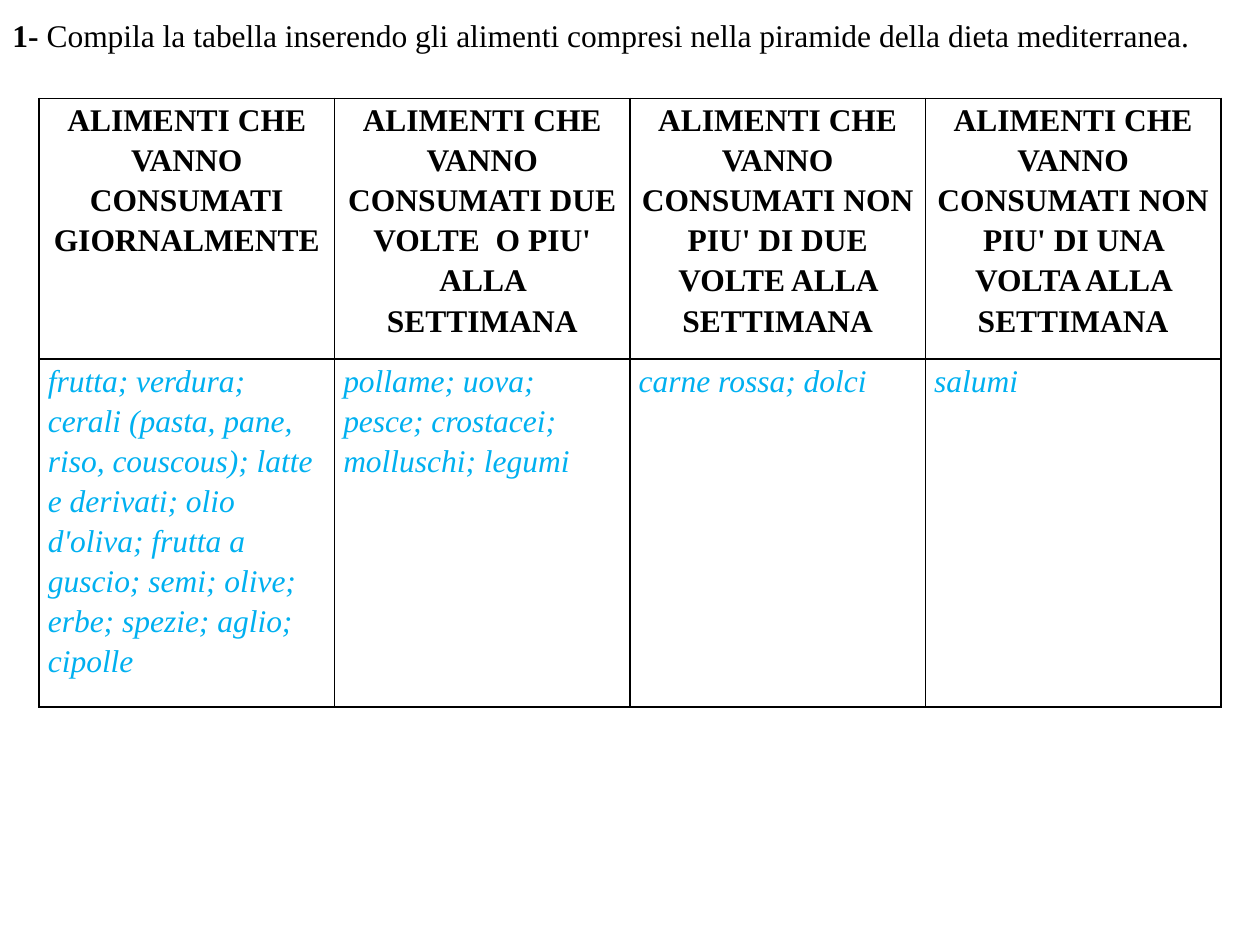
from lxml.etree import SubElement
from pptx import Presentation
from pptx.dml.color import RGBColor
from pptx.enum.text import MSO_ANCHOR, MSO_AUTO_SIZE, PP_ALIGN
from pptx.oxml.ns import qn
from pptx.util import Inches, Pt

COLORS = {"ink": "000000", "answer": "00B0F0", "paper": "FFFFFF"}

HEADS = [
    "ALIMENTI CHE VANNO CONSUMATI GIORNALMENTE",
    "ALIMENTI CHE VANNO CONSUMATI DUE VOLTE  O PIU' ALLA SETTIMANA",
    "ALIMENTI CHE VANNO CONSUMATI NON PIU' DI DUE VOLTE ALLA SETTIMANA",
    "ALIMENTI CHE VANNO CONSUMATI NON PIU' DI UNA VOLTA ALLA SETTIMANA",
]
FOODS = [
    "frutta; verdura; cerali (pasta, pane, riso, couscous); latte e derivati; "
    "olio d'oliva; frutta a guscio; semi; olive; erbe; spezie; aglio; cipolle",
    "pollame; uova; pesce; crostacei; molluschi; legumi",
    "carne rossa; dolci",
    "salumi",
]


def write(para, text, color="ink", bold=False, italic=False,
          font="Times New Roman", size=18):
    """Add one formatted run to a paragraph."""
    run = para.add_run()
    run.text = text
    run.font.name, run.font.size = font, Pt(size)
    run.font.bold, run.font.italic = bold, italic
    run.font.color.rgb = RGBColor.from_string(COLORS[color])


class Sheet:
    def __init__(self, slide):
        self.slide = slide
        self.inset = Inches(0.07)
        self.border = Pt(1)

    def title(self, number, text, left, top, width, height):
        box = self.slide.shapes.add_textbox(
            Inches(left), Inches(top), Inches(width), Inches(height))
        frame = box.text_frame
        frame.word_wrap = False
        frame.auto_size = MSO_AUTO_SIZE.SHAPE_TO_FIT_TEXT
        frame.vertical_anchor = MSO_ANCHOR.MIDDLE
        para = frame.paragraphs[0]
        write(para, number, bold=True)
        write(para, text)

    def table(self, rows, left, top, width, heights):
        count = len(rows[0])
        table = self.slide.shapes.add_table(
            len(rows), count, Inches(left), Inches(top),
            Inches(width), Inches(sum(heights))).table
        for col in table.columns:
            col.width = Inches(width / count)
        for r, (texts, height) in enumerate(zip(rows, heights)):
            table.rows[r].height = Inches(height)
            for c, text in enumerate(texts):
                self.cell(table.cell(r, c), text, head=r == 0)

    def cell(self, cell, text, head):
        cell.margin_left = cell.margin_right = self.inset
        cell.margin_top = cell.margin_bottom = 0
        self.frame(cell)
        cell.fill.solid()
        cell.fill.fore_color.rgb = RGBColor.from_string(COLORS["paper"])
        para = cell.text_frame.paragraphs[0]
        para.line_spacing = 1.15
        para.space_after = Pt(10)
        para.alignment = PP_ALIGN.CENTER if head else PP_ALIGN.LEFT
        write(para, text, color="ink" if head else "answer",
              bold=head, italic=not head)

    def frame(self, cell):
        # Borders precede the fill in the cell properties
        props = cell._tc.get_or_add_tcPr()
        for side in "LRTB":
            line = SubElement(props, qn(f"a:ln{side}"), w=str(self.border))
            fill = SubElement(line, qn("a:solidFill"))
            SubElement(fill, qn("a:srgbClr"), val=COLORS["ink"])


def main():
    deck = Presentation()
    deck.slide_width, deck.slide_height = Inches(10), Inches(7.5)
    sheet = Sheet(deck.slides.add_slide(deck.slide_layouts[6]))

    # Task
    sheet.title("1- ", "Compila la tabella inserendo gli alimenti compresi "
                "nella piramide della dieta mediterranea.",
                0, 0.08, 9.65, 0.4)

    # Foods by how often they are eaten
    sheet.table([HEADS, FOODS], 0.31, 0.78, 9.38, [2.07, 2.76])

    deck.save("out.pptx")


if __name__ == "__main__":
    main()
